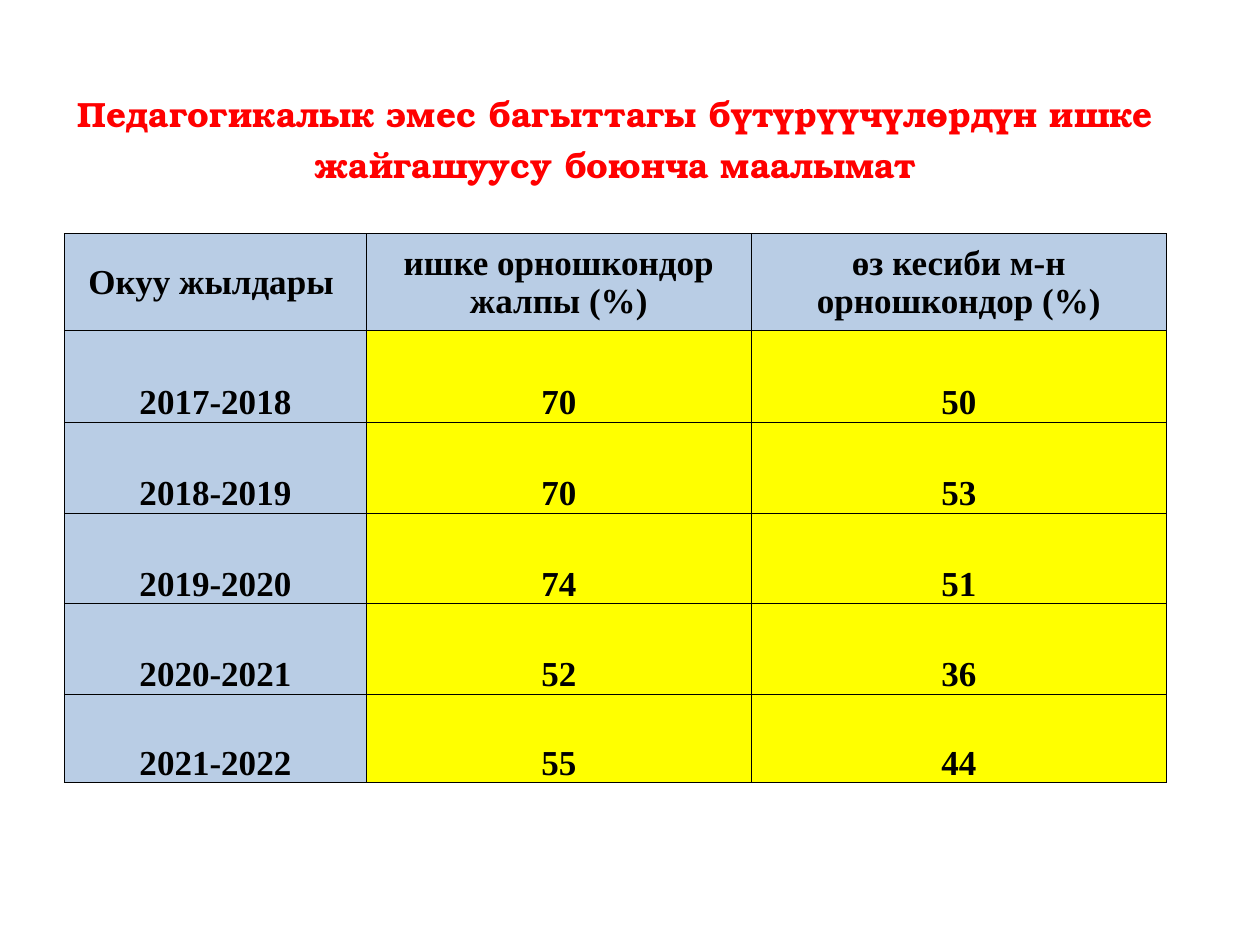
from dataclasses import dataclass

from lxml import etree
from pptx import Presentation
from pptx.dml.color import RGBColor
from pptx.enum import text
from pptx.oxml import ns
from pptx.util import Inches, Pt


@dataclass(frozen=True)
class Theme:
    title_font: str = "TeX Gyre Bonum"
    body_font: str = "Times New Roman"
    size: int = 20
    title_color: str = "FF0000"
    ink: str = "000000"
    label_fill: str = "B9CDE5"
    value_fill: str = "FFFF00"
    border_width: float = 0.5


THEME = Theme()
TITLE = "Педагогикалык эмес багыттагы бүтүрүүчүлөрдүн ишке жайгашуусу боюнча маалымат"
HEADERS = ("Окуу жылдары ", "ишке орношкондор жалпы (%)", "өз кесиби м-н орношкондор (%)")
PLACEMENTS = (
    ("2017-2018", 70, 50),
    ("2018-2019", 70, 53),
    ("2019-2020", 74, 51),
    ("2020-2021", 52, 36),
    ("2021-2022", 55, 44),
)
COLUMN_WIDTHS = (2.4, 3.05, 3.3)
ROW_HEIGHTS = (1.16, 0.77, 0.73, 0.72, 0.72, 0.72, 0.7)


def set_borders(cell, drawn_sides):
    properties = cell._tc.get_or_add_tcPr()
    for index, side in enumerate(("L", "R", "T", "B")):
        line = etree.Element(ns.qn(f"a:ln{side}"), w=str(Pt(THEME.border_width)))
        if side in drawn_sides:
            fill = etree.SubElement(line, ns.qn("a:solidFill"))
            etree.SubElement(fill, ns.qn("a:srgbClr"), val=THEME.ink)
        else:
            etree.SubElement(line, ns.qn("a:noFill"))
        properties.insert(index, line)


def fill_cell(cell, content, fill=None, font=THEME.body_font, color=THEME.ink,
              anchor=text.MSO_ANCHOR.BOTTOM, bottom=0, sides="LRTB"):
    cell.text_frame.text = str(content)
    cell.vertical_anchor = anchor
    cell.margin_left = cell.margin_right = cell.margin_top = Inches(0.01)
    cell.margin_bottom = Inches(bottom)
    paragraph = cell.text_frame.paragraphs[0]
    paragraph.alignment = text.PP_ALIGN.CENTER
    style = paragraph.runs[0].font
    style.name = font
    style.size = Pt(THEME.size)
    style.bold = True
    style.color.rgb = RGBColor.from_string(color)
    if fill:
        cell.fill.solid()
        cell.fill.fore_color.rgb = RGBColor.from_string(fill)
    else:
        cell.fill.background()
    set_borders(cell, sides)


def add_placement_table(slide):
    frame = slide.shapes.add_table(
        len(ROW_HEIGHTS), len(COLUMN_WIDTHS), Inches(0.51), Inches(0.68),
        Inches(sum(COLUMN_WIDTHS)), Inches(sum(ROW_HEIGHTS)))
    table = frame.table
    table.first_row = table.horz_banding = False
    for column, width in zip(table.columns, COLUMN_WIDTHS):
        column.width = Inches(width)
    for row, height in zip(table.rows, ROW_HEIGHTS):
        row.height = Inches(height)
    return table


def add_title(table):
    title = table.cell(0, 0)
    title.merge(table.cell(0, len(COLUMN_WIDTHS) - 1))
    fill_cell(title, TITLE, font=THEME.title_font, color=THEME.title_color,
              bottom=0.35, sides="B")
    for column in range(1, len(COLUMN_WIDTHS)):
        covered = table.cell(0, column)
        covered.fill.background()
        set_borders(covered, "B")


def main():
    presentation = Presentation()
    presentation.slide_width = Inches(10)
    presentation.slide_height = Inches(7.5)
    slide = presentation.slides.add_slide(presentation.slide_layouts[6])
    table = add_placement_table(slide)
    add_title(table)
    for column, header in enumerate(HEADERS):
        fill_cell(table.cell(1, column), header, THEME.label_fill,
                  anchor=text.MSO_ANCHOR.MIDDLE)
    for row, record in enumerate(PLACEMENTS, start=2):
        for column, content in enumerate(record):
            fill = THEME.value_fill if column else THEME.label_fill
            fill_cell(table.cell(row, column), content, fill)
    presentation.save("out.pptx")


if __name__ == "__main__":
    main()
